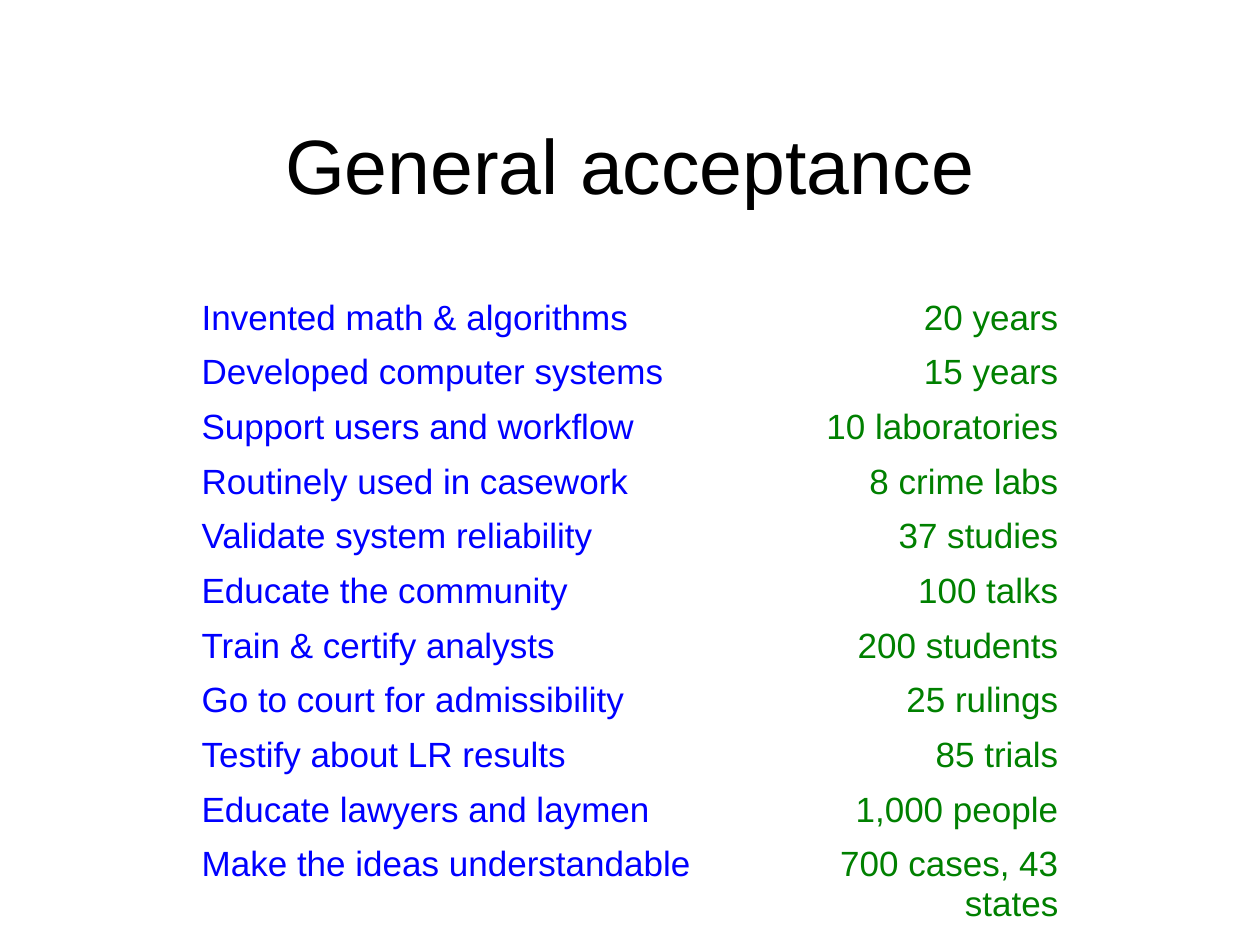
from pptx import Presentation
from pptx.dml.color import RGBColor
from pptx.enum.text import MSO_ANCHOR, PP_ALIGN
from pptx.util import Inches, Pt

TITLE = "General acceptance"
ROWS = [
    ("Invented math & algorithms", "20 years"),
    ("Developed computer systems", "15 years"),
    ("Support users and workflow", "10 laboratories"),
    ("Routinely used in casework", "8 crime labs"),
    ("Validate system reliability", "37 studies"),
    ("Educate the community", "100 talks"),
    ("Train & certify analysts", "200 students"),
    ("Go to court for admissibility", "25 rulings"),
    ("Testify about LR results", "85 trials"),
    ("Educate lawyers and laymen", "1,000 people"),
    ("Make the ideas understandable", "700 cases, 43 states"),
]
COLORS = {"title": "000000", "task": "0000FF", "count": "008000"}
COLS = [
    (4.25, PP_ALIGN.LEFT, "task"),
    (2.75, PP_ALIGN.RIGHT, "count"),
]
WIDE, HIGH = 10, 7.5
ROW = 0.43
TOP = 2.32


def style(frame, text, size, align, color):
    frame.text = text
    line = frame.paragraphs[0]
    line.alignment = align
    font = line.runs[0].font
    font.name = "Arial"
    font.size = Pt(size)
    font.bold = False
    font.color.rgb = RGBColor.from_string(COLORS[color])


def add_title(slide):
    box = slide.shapes.add_textbox(0, Inches(0.67), Inches(WIDE), Inches(1.25))
    frame = box.text_frame
    frame.word_wrap = True
    frame.vertical_anchor = MSO_ANCHOR.MIDDLE
    style(frame, TITLE, 44, PP_ALIGN.CENTER, "title")


def add_grid(slide):
    width = sum(col[0] for col in COLS)
    left = (WIDE - width) / 2
    table = slide.shapes.add_table(
        len(ROWS), len(COLS), Inches(left), Inches(TOP),
        Inches(width), Inches(ROW * len(ROWS))).table
    table.first_row = False
    table.horz_banding = False
    for c, (span, align, color) in enumerate(COLS):
        table.columns[c].width = Inches(span)
        for r, row in enumerate(ROWS):
            cell = table.cell(r, c)
            cell.fill.background()
            style(cell.text_frame, row[c], 20, align, color)


def main():
    deck = Presentation()
    deck.slide_width = Inches(WIDE)
    deck.slide_height = Inches(HIGH)
    slide = deck.slides.add_slide(deck.slide_layouts[6])
    add_title(slide)
    add_grid(slide)
    deck.save("out.pptx")


if __name__ == "__main__":
    main()
